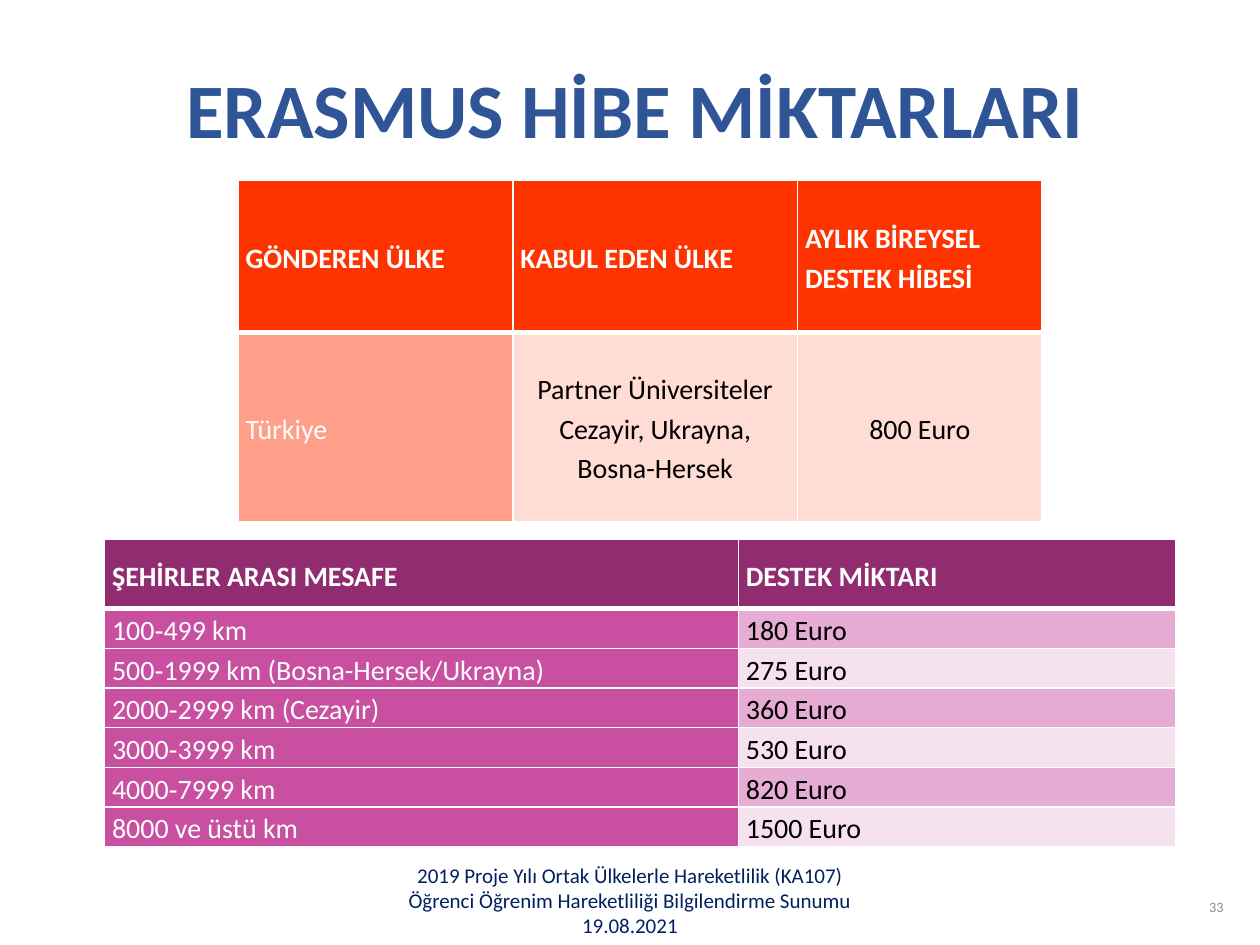
import pptx
import pptx.util
import pptx.dml.color
import pptx.enum.text
from lxml import etree

Inches = pptx.util.Inches
Pt = pptx.util.Pt
RGB = pptx.dml.color.RGBColor
ALIGN = pptx.enum.text.PP_ALIGN
MID = pptx.enum.text.MSO_ANCHOR.MIDDLE
TOP = pptx.enum.text.MSO_ANCHOR.TOP

WHITE = RGB(0xFF, 0xFF, 0xFF)
BLACK = RGB(0, 0, 0)
BLUE = RGB(0x2F, 0x55, 0x97)
NAVY = RGB(0x00, 0x20, 0x60)
GRAY = RGB(0x8C, 0x8C, 0x8C)
RED = RGB(0xFF, 0x33, 0x00)
CORAL = RGB(0xFF, 0x9F, 0x89)
BLUSH = RGB(0xFF, 0xDD, 0xD5)
PLUM = RGB(0x90, 0x2C, 0x6F)
PINK = RGB(0xC9, 0x4F, 0xA0)
ROSE = RGB(0xE6, 0xAC, 0xD3)
PALE = RGB(0xF6, 0xE2, 0xEF)

TITLE = ["ERASMUS HİBE MİKTARLARI"]
PAGE = ["33"]
FOOTER = [
    "2019 Proje Yılı Ortak Ülkelerle Hareketlilik (KA107)",
    "Öğrenci Öğrenim Hareketliliği Bilgilendirme Sunumu",
    "19.08.2021",
]
GRANTS = [
    ["GÖNDEREN ÜLKE", "KABUL EDEN ÜLKE", "AYLIK BİREYSEL DESTEK HİBESİ"],
    ["Türkiye", "Partner Üniversiteler\nCezayir, Ukrayna, Bosna-Hersek", "800 Euro"],
]
TRAVEL = [
    ["ŞEHİRLER ARASI MESAFE", "DESTEK MİKTARI"],
    ["100‐499 km", "180 Euro"],
    ["500‐1999 km (Bosna-Hersek/Ukrayna)", "275 Euro"],
    ["2000‐2999 km (Cezayir)", "360 Euro"],
    ["3000‐3999 km", "530 Euro"],
    ["4000‐7999 km", "820 Euro"],
    ["8000 ve üstü km", "1500 Euro"],
]


def style(par, size, color, align, bold=False):
    par.alignment = align
    par.font.name = "Calibri"
    par.font.size = Pt(size)
    par.font.bold = bold
    par.font.color.rgb = color


def add_text(slide, box, lines, size, color, align, anchor, bold=False):
    frame = slide.shapes.add_textbox(*map(Inches, box)).text_frame
    frame.word_wrap = True
    frame.vertical_anchor = anchor
    frame.text = "\n".join(lines)
    for par in frame.paragraphs:
        style(par, size, color, align, bold)


def add_lines(cell, base):
    props = cell._tc.get_or_add_tcPr()
    for side in "LRTB":
        width = Pt(base if side == "B" else 1)
        line = etree.SubElement(props, pptx.oxml.ns.qn(f"a:ln{side}"), w=str(width))
        fill = etree.SubElement(line, pptx.oxml.ns.qn("a:solidFill"))
        etree.SubElement(fill, pptx.oxml.ns.qn("a:srgbClr"), val=str(WHITE))


def add_grid(slide, left, top, wide, high, rows, head, side, bands, aligns):
    table = slide.shapes.add_table(
        len(rows), len(wide), Inches(left), Inches(top),
        Inches(sum(wide)), Inches(sum(high))).table
    table.first_row = table.horz_banding = False
    for col, width in zip(table.columns, wide):
        col.width = Inches(width)
    for r, (row, height) in enumerate(zip(rows, high)):
        table.rows[r].height = Inches(height)
        for c, text in enumerate(row):
            cell = table.cell(r, c)
            add_lines(cell, 3 if r == 0 else 1)
            cell.fill.solid()
            band = bands[(r - 1) % len(bands)]
            cell.fill.fore_color.rgb = head if r == 0 else band if c else side
            cell.vertical_anchor = MID
            cell.margin_left = cell.margin_right = Inches(0.06)
            cell.margin_top = cell.margin_bottom = 0
            cell.text = text
            for par in cell.text_frame.paragraphs:
                style(par, 16, BLACK if r and c else WHITE,
                      aligns[c] if r else ALIGN.LEFT, r == 0)
                par.line_spacing = 1.15


def main():
    deck = pptx.Presentation()
    deck.slide_width, deck.slide_height = Inches(10), Inches(7.5)
    slide = deck.slides.add_slide(deck.slide_layouts[6])
    add_text(slide, (0.28, 0.44, 9.53, 0.84), TITLE, 44, BLUE, ALIGN.CENTER, TOP, True)
    add_text(slide, (9.33, 7, 0.48, 0.4), PAGE, 8.2, GRAY, ALIGN.RIGHT, MID)
    add_grid(slide, 1.89, 1.43, [2.18, 2.26, 1.94], [1.21, 1.5], GRANTS,
             RED, CORAL, [BLUSH], [ALIGN.LEFT, ALIGN.CENTER, ALIGN.CENTER])
    add_grid(slide, 0.83, 4.28, [5.03, 3.47], [0.55] + [1.89 / 6] * 6, TRAVEL,
             PLUM, PINK, [ROSE, PALE], [ALIGN.JUSTIFY] * 2)
    add_text(slide, (2.75, 6.87, 4.5, 0.55), FOOTER, 12, NAVY, ALIGN.CENTER, MID)
    deck.save("out.pptx")


if __name__ == "__main__":
    main()
